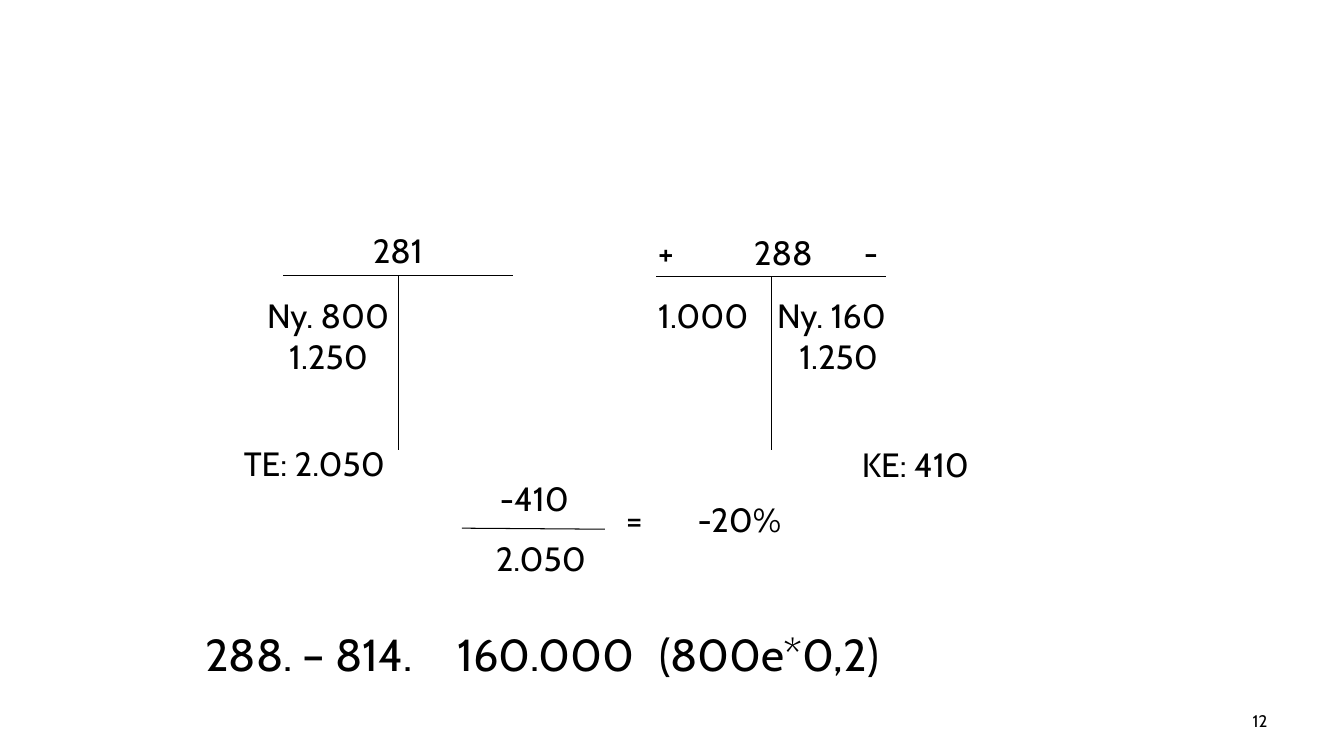
from lxml.etree import SubElement
from pptx import Presentation
from pptx.dml.color import RGBColor
from pptx.enum.shapes import MSO_CONNECTOR as Connector
from pptx.enum.text import MSO_ANCHOR as Anchor, MSO_AUTO_SIZE as AutoSize, PP_ALIGN as Align
from pptx.oxml.ns import qn
from pptx.util import Inches, Pt

FONT = "Cabin"
INK = "000000"
LINE_HEIGHT = 0.51
ACCOUNT_WIDTH = 2.28
STEM_BOTTOM = 4.46
AMOUNT_INDENT = 0.22


def color(hex_value):
    return RGBColor.from_string(hex_value)


def add_rule(slide, x1, y1, x2, y2):
    rule = slide.shapes.add_connector(
        Connector.STRAIGHT, Inches(x1), Inches(y1), Inches(x2), Inches(y2))
    rule.line.color.rgb = color(INK)
    rule.line.width = Pt(0.75)
    SubElement(rule._element.spPr, qn("a:effectLst"))


def add_label(slide, text, left, top, width, height=LINE_HEIGHT, size=24):
    label = slide.shapes.add_textbox(
        Inches(left), Inches(top), Inches(width), Inches(height))
    frame = label.text_frame
    frame.word_wrap = True
    frame.auto_size = AutoSize.SHAPE_TO_FIT_TEXT
    frame.text = text
    for paragraph in frame.paragraphs:
        for run in paragraph.runs:
            run.font.name = FONT
            run.font.size = Pt(size)
            run.font.color.rgb = color(INK)
    return frame


def add_account(slide, left, top, entries):
    """Draw a T-account; entries are (text, dx, dy, width) from its top left.

    A second line in an entry is an indented amount.
    """
    middle = left + ACCOUNT_WIDTH / 2
    add_rule(slide, left, top, left + ACCOUNT_WIDTH, top)
    add_rule(slide, middle, top, middle, STEM_BOTTOM)
    for text, dx, dy, width in entries:
        height = 0.91 if "\n" in text else LINE_HEIGHT
        frame = add_label(slide, text, left + dx, top + dy, width, height)
        for amount in frame.paragraphs[1:]:
            amount._p.get_or_add_pPr().set("marL", str(Inches(AMOUNT_INDENT)))


def add_ratio(slide, left, top):
    """Draw the fraction and its result around a bar starting at left, top."""
    add_rule(slide, left, top, left + 1.42, top + 0.01)
    add_label(slide, "-410", left + 0.28, top - 0.55, 1.1)
    add_label(slide, "2.050", left + 0.24, top + 0.05, 1.14)
    add_label(slide, "=", left + 1.53, top - 0.34, 0.44)
    add_label(slide, "-20%", left + 2.24, top - 0.34, 1.98)


def add_booking(slide, left, top):
    frame = add_label(slide, "288. – 814.\t160.000\t(800e*0,2)",
                      left, top, 9.37, 0.53, size=32)
    frame.paragraphs[0].line_spacing = 0.8


def add_page_number(slide, left, top):
    frame = add_label(slide, "12", left, top, 3.11, 0.4, size=12)
    frame.auto_size = AutoSize.NONE
    frame.vertical_anchor = Anchor.MIDDLE
    frame.paragraphs[0].alignment = Align.RIGHT


def main():
    deck = Presentation()
    deck.slide_width, deck.slide_height = Inches(13.33), Inches(7.5)
    slide = deck.slides.add_slide(deck.slide_layouts[6])

    add_account(slide, 2.81, 2.73, [
        ("281", 0.79, -0.5, 1.42),
        ("Ny. 800\n1.250", -0.26, 0.15, 1.52),
        ("TE: 2.050", -0.49, 1.61, 2.7),
    ])
    add_account(slide, 6.51, 2.74, [
        ("+", -0.08, -0.49, 0.27),
        ("288", 0.87, -0.49, 1.1),
        ("-", 1.96, -0.49, 0.32),
        ("1.000", -0.08, 0.14, 1.26),
        ("Ny. 160\n1.250", 1.1, 0.14, 1.54),
        ("KE: 410", 1.94, 1.61, 2.07),
    ])
    add_ratio(slide, 4.58, 5.24)
    add_booking(slide, 1.94, 6.27)
    add_page_number(slide, 9.56, 6.95)
    deck.save("out.pptx")


if __name__ == "__main__":
    main()
